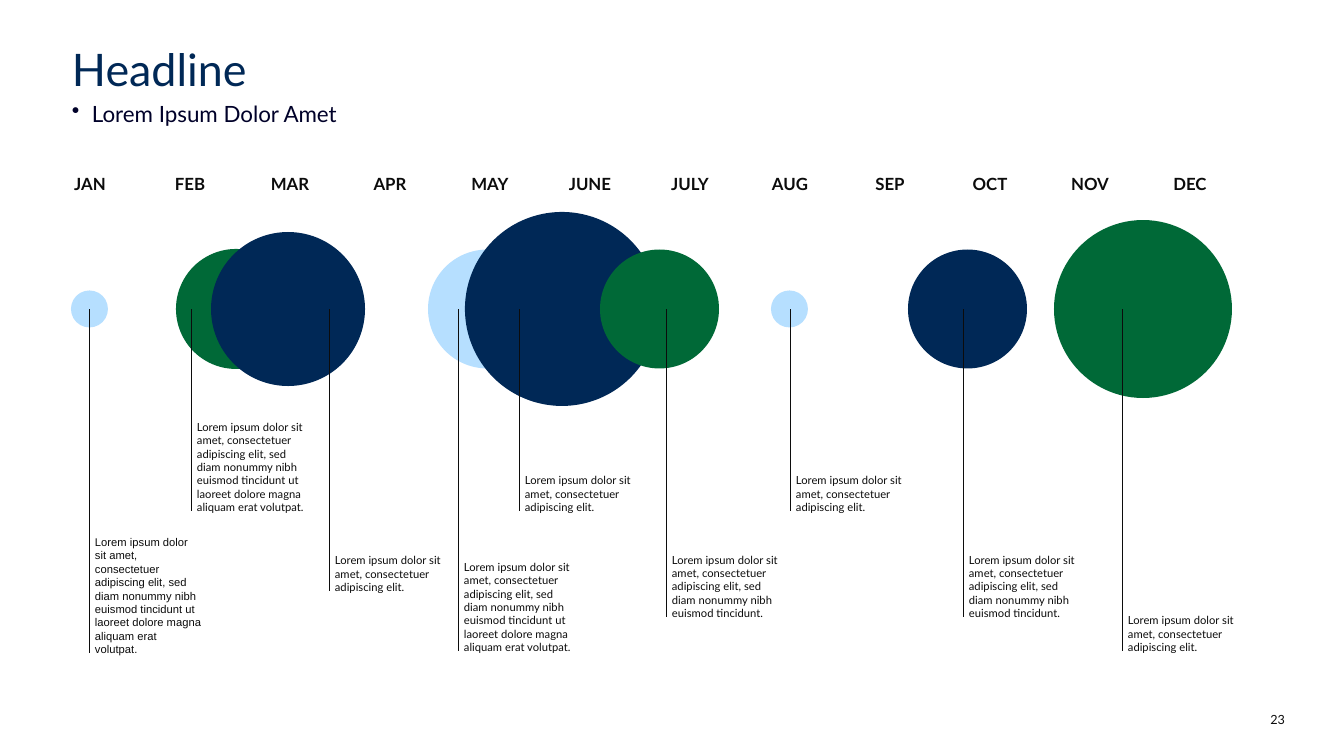
import pptx
import pptx.dml.color
import pptx.enum.shapes
import pptx.enum.text
import pptx.util
from lxml import etree

PX = 12192000 / 1344
INK, NAVY, GREEN, SKY = "0C0C0C", "002856", "006937", "B6DFFF"
ALIGN = pptx.enum.text.PP_ALIGN
ANCHOR = pptx.enum.text.MSO_ANCHOR
AXIS = 309

SHORT = "Lorem ipsum dolor sit amet, consectetuer adipiscing elit"
MID = SHORT + ", sed diam nonummy nibh euismod tincidunt"
LONG = MID + " ut laoreet dolore magna aliquam erat volutpat"

MONTHS = "JAN FEB MAR APR MAY JUNE JULY AUG SEP OCT NOV DEC".split()
DISCS = [
    (71, 37, SKY), (176, 120, GREEN), (211, 154, NAVY),
    (428, 119, SKY), (465, 194, NAVY), (600, 119, GREEN),
    (771, 37, SKY), (908, 119, NAVY), (1054, 178, GREEN),
]
NOTES = [
    (89, 653, LONG, "Arial"), (191, 511, LONG, "Lato"), (329, 591, SHORT, "Lato"),
    (458, 651, LONG, "Lato"), (519, 511, SHORT, "Lato"), (666, 617, MID, "Lato"),
    (790, 511, SHORT, "Lato"), (963, 617, MID, "Lato"), (1122, 651, SHORT, "Lato"),
]


def emu(px):
    """Turn px into EMU."""
    return pptx.util.Emu(round(px * PX))


def rgb(code):
    """Turn a hex string into a colour."""
    return pptx.dml.color.RGBColor.from_string(code)


class Deck:
    """Hold the style and the current slide."""

    def __init__(self, font, ink):
        """Open a deck with one blank slide."""
        self.font, self.ink = font, ink
        self.show = pptx.Presentation()
        self.show.slide_width, self.show.slide_height = emu(1344), emu(756)
        self.slide = self.show.slides.add_slide(self.show.slide_layouts[6])

    def text(self, box, words, size, font=None, color=None, bold=False,
             align=ALIGN.LEFT, anchor=ANCHOR.TOP):
        """Add a text box and return its paragraph."""
        frame = self.slide.shapes.add_textbox(*map(emu, box)).text_frame
        frame.word_wrap = True
        frame.vertical_anchor = anchor
        frame.margin_left = frame.margin_right = 0
        frame.margin_top = frame.margin_bottom = 0
        para = frame.paragraphs[0]
        para.alignment = align
        run = para.add_run()
        run.text = words
        run.font.size = pptx.util.Pt(size)
        run.font.name = font or self.font
        run.font.bold = bold
        run.font.color.rgb = rgb(color or self.ink)
        return para

    def bullet(self, para, indent):
        """Give a paragraph a hanging bullet."""
        props = para._p.get_or_add_pPr()
        props.set("marL", str(emu(indent)))
        props.set("indent", str(-emu(indent)))
        mark = etree.SubElement(props, pptx.oxml.ns.qn("a:buChar"))
        mark.set("char", "•")

    def disc(self, left, size, color):
        """Add a circle centred on the axis."""
        kind = pptx.enum.shapes.MSO_SHAPE.OVAL
        top = AXIS - size / 2
        disc = self.slide.shapes.add_shape(kind, *map(emu, (left, top, size, size)))
        disc.shadow.inherit = False
        disc.fill.solid()
        disc.fill.fore_color.rgb = rgb(color)
        disc.line.fill.background()

    def stem(self, x, base):
        """Add a thin line from the base up to the axis."""
        kind = pptx.enum.shapes.MSO_CONNECTOR.STRAIGHT
        stem = self.slide.shapes.add_connector(kind, *map(emu, (x, base, x, AXIS)))
        stem.line.width = pptx.util.Pt(0.5)
        stem.line.color.rgb = rgb(self.ink)
        etree.SubElement(stem._element.spPr, pptx.oxml.ns.qn("a:effectLst"))


def main():
    """Build the timeline slide."""
    deck = Deck("Lato", INK)
    head = deck.text((72, 48, 1228, 48), "Headline", 32, color=NAVY)
    head.line_spacing = 0.9
    lead = deck.text((72, 100, 1228, 37), "Lorem Ipsum Dolor Amet", 16, color="000129")
    deck.bullet(lead, 20)
    for i, month in enumerate(MONTHS):
        deck.text((46 + 100 * i, 174, 88, 20), month, 12, bold=True, align=ALIGN.CENTER)
    for disc in DISCS:
        deck.disc(*disc)
    for x, base, words, font in NOTES:
        deck.stem(x, base)
        deck.text((x + 6, base - 44, 107, 47), words + ".", 8, font, anchor=ANCHOR.BOTTOM)
    deck.text((1252, 707, 33, 20), "23", 9, align=ALIGN.RIGHT, anchor=ANCHOR.BOTTOM)
    deck.show.save("out.pptx")


if __name__ == "__main__":
    main()
